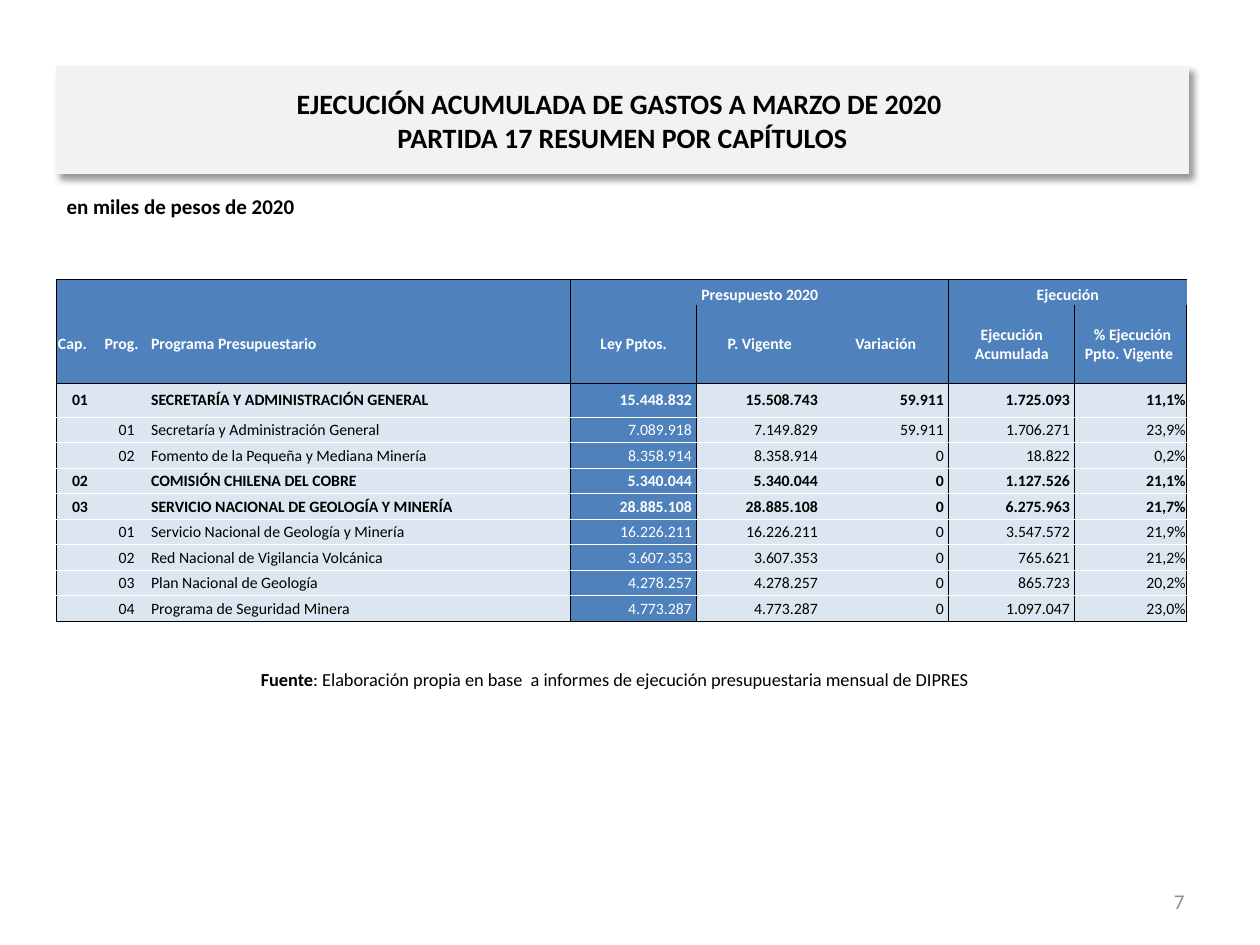
from lxml.etree import SubElement, fromstring
from pptx import Presentation
from pptx.dml.color import RGBColor
from pptx.enum.text import MSO_ANCHOR, MSO_AUTO_SIZE, PP_ALIGN
from pptx.oxml.ns import nsdecls, qn
from pptx.util import Inches, Pt

BLACK = RGBColor(0x00, 0x00, 0x00)
WHITE = RGBColor(0xFF, 0xFF, 0xFF)
BANNER = RGBColor(0xF2, 0xF2, 0xF2)
GREY = RGBColor(0x8C, 0x8C, 0x8C)
BLUE = RGBColor(0x4F, 0x81, 0xBD)
PALE_BLUE = RGBColor(0xDC, 0xE6, 0xF1)
LEFT, CENTER, RIGHT, JUSTIFY = (
    PP_ALIGN.LEFT, PP_ALIGN.CENTER, PP_ALIGN.RIGHT, PP_ALIGN.JUSTIFY)
NO_STYLE = "{2D5ABB26-0587-4C30-8999-92F81FD0307C}"


def write(frame, text, size=9, color=BLACK, bold=False, align=LEFT,
          anchor=MSO_ANCHOR.TOP):
    """Append text to the frame's first paragraph; a newline is a line break."""
    frame.word_wrap = True
    frame.vertical_anchor = anchor
    paragraph = frame.paragraphs[0]
    paragraph.alignment = align
    for index, line in enumerate(text.split("\n")):
        if index:
            paragraph.add_line_break()
        run = paragraph.add_run()
        run.text = line
        run.font.name = "Calibri"
        run.font.size = Pt(size)
        run.font.bold = bold
        run.font.color.rgb = color


def add_border(cell, side, color):
    line = SubElement(cell._tc.get_or_add_tcPr(), qn(f"a:ln{side}"), w=str(Pt(0.5)))
    fill = SubElement(line, qn("a:solidFill"))
    SubElement(fill, qn("a:srgbClr"), val=str(color))


prs = Presentation()
prs.slide_width, prs.slide_height = Inches(10), Inches(7.5)
slide = prs.slides.add_slide(prs.slide_layouts[5])

# Page number, source and unit
page_number = slide.shapes.add_textbox(
    Inches(7.17), Inches(6.95), Inches(2.33), Inches(0.4)).text_frame
write(page_number, "7", size=12, color=GREY, align=RIGHT, anchor=MSO_ANCHOR.MIDDLE)

source = slide.shapes.add_textbox(
    Inches(0.46), Inches(5.25), Inches(8.84), Inches(0.4)).text_frame
write(source, "Fuente", size=10.5, bold=True, align=CENTER)
write(source, ": Elaboración propia en base  a informes de ejecución "
      "presupuestaria mensual de DIPRES", size=10.5, align=CENTER)

unit = slide.shapes.add_textbox(
    Inches(0.43), Inches(1.49), Inches(8.25), Inches(0.37)).text_frame
write(unit, "en miles de pesos de 2020", size=12, bold=True)

# Title banner
title = slide.shapes.title
title.left, title.top = Inches(0.45), Inches(0.53)
title.width, title.height = Inches(8.98), Inches(0.85)
title.fill.solid()
title.fill.fore_color.rgb = BANNER
title.line.color.rgb = BANNER
title.line.width = Pt(0.75)
title.text_frame.auto_size = MSO_AUTO_SIZE.NONE
write(title.text_frame,
      "EJECUCIÓN ACUMULADA DE GASTOS A MARZO DE 2020 \n"
      "PARTIDA 17 RESUMEN POR CAPÍTULOS",
      size=16, bold=True, align=CENTER, anchor=MSO_ANCHOR.MIDDLE)
title.element.spPr.append(fromstring(
    f'<a:effectLst {nsdecls("a")}>'
    f'<a:outerShdw blurRad="{Pt(4)}" dist="{Pt(3)}" dir="2700000" algn="tl" '
    'rotWithShape="0"><a:srgbClr val="000000"><a:alpha val="40000"/></a:srgbClr>'
    '</a:outerShdw></a:effectLst>'))

# Budget table
budget_rows = [
    ("", "", "", "Presupuesto 2020", "", "", "Ejecución", ""),
    ("Cap.", "Prog.", "Programa Presupuestario", "Ley Pptos.", "P. Vigente",
     "Variación", "Ejecución Acumulada", " % Ejecución Ppto. Vigente "),
    ("01", "", "SECRETARÍA Y ADMINISTRACIÓN GENERAL",
     "15.448.832 ", "15.508.743 ", "59.911 ", "1.725.093 ", "11,1%"),
    ("", "01", "Secretaría y Administración General",
     "7.089.918 ", "7.149.829 ", "59.911 ", "1.706.271 ", "23,9%"),
    ("", "02", "Fomento de la Pequeña y Mediana Minería",
     "8.358.914 ", "8.358.914 ", "0 ", "18.822 ", "0,2%"),
    ("02", "", "COMISIÓN CHILENA DEL COBRE",
     "5.340.044 ", "5.340.044 ", "0 ", "1.127.526 ", "21,1%"),
    ("03", "", "SERVICIO NACIONAL DE GEOLOGÍA Y MINERÍA",
     "28.885.108 ", "28.885.108 ", "0 ", "6.275.963 ", "21,7%"),
    ("", "01", "Servicio Nacional de Geología y Minería",
     "16.226.211 ", "16.226.211 ", "0 ", "3.547.572 ", "21,9%"),
    ("", "02", "Red Nacional de Vigilancia Volcánica",
     "3.607.353 ", "3.607.353 ", "0 ", "765.621 ", "21,2%"),
    ("", "03", "Plan Nacional de Geología",
     "4.278.257 ", "4.278.257 ", "0 ", "865.723 ", "20,2%"),
    ("", "04", "Programa de Seguridad Minera",
     "4.773.287 ", "4.773.287 ", "0 ", "1.097.047 ", "23,0%"),
]
column_widths = [0.37, 0.37, 3.34, 1, 1, 1, 1, 0.89]
top_heights = [0.2, 0.62, 0.27]
table_height = 2.71
detail_count = len(budget_rows) - len(top_heights)
detail_height = (table_height - sum(top_heights)) / detail_count
row_heights = top_heights + [detail_height] * detail_count
HEADER_ROWS = 2
LAW_COLUMN = 3
GROUP_STARTS, GROUP_ENDS = (0, 3, 6), (2, 5, 7)
last_row = len(budget_rows) - 1

frame = slide.shapes.add_table(
    len(budget_rows), len(column_widths),
    Inches(0.45), Inches(2.22), Inches(8.98), Inches(table_height))
for style_id in frame.element.iter(qn("a:tableStyleId")):
    style_id.text = NO_STYLE
budget = frame.table
budget.first_row = budget.horz_banding = False
for column, width in zip(budget.columns, column_widths):
    column.width = Inches(width)
for row, height in zip(budget.rows, row_heights):
    row.height = Inches(height)

for r, values in enumerate(budget_rows):
    is_header = r < HEADER_ROWS
    for c, value in enumerate(values):
        cell = budget.cell(r, c)
        cell.margin_left = cell.margin_right = cell.margin_top = Inches(0.01)
        cell.margin_bottom = 0
        cell.vertical_anchor = MSO_ANCHOR.BOTTOM if r == 0 else MSO_ANCHOR.MIDDLE

        if c in GROUP_STARTS:
            add_border(cell, "L", BLACK)
        if c in GROUP_ENDS:
            add_border(cell, "R", BLACK)
        if r != 1:
            add_border(cell, "T", BLACK if r in (0, HEADER_ROWS) else WHITE)
        if r != 0:
            add_border(cell, "B", BLACK if r in (1, last_row) else WHITE)

        on_blue = is_header or c == LAW_COLUMN
        cell.fill.solid()
        cell.fill.fore_color.rgb = BLUE if on_blue else PALE_BLUE

        if is_header:
            align = LEFT if c < LAW_COLUMN else CENTER
        elif c < LAW_COLUMN:
            align = JUSTIFY if c == 2 else CENTER
        else:
            align = RIGHT
        if value:
            write(cell.text_frame, value, color=WHITE if on_blue else BLACK,
                  bold=is_header or bool(values[0]), align=align,
                  anchor=cell.vertical_anchor)
        else:
            # The end mark's size keeps an empty cell from stretching its row
            SubElement(cell.text_frame.paragraphs[0]._p, qn("a:endParaRPr"), sz="900")

budget.cell(0, 3).merge(budget.cell(0, 5))
budget.cell(0, 6).merge(budget.cell(0, 7))

prs.save("out.pptx")
